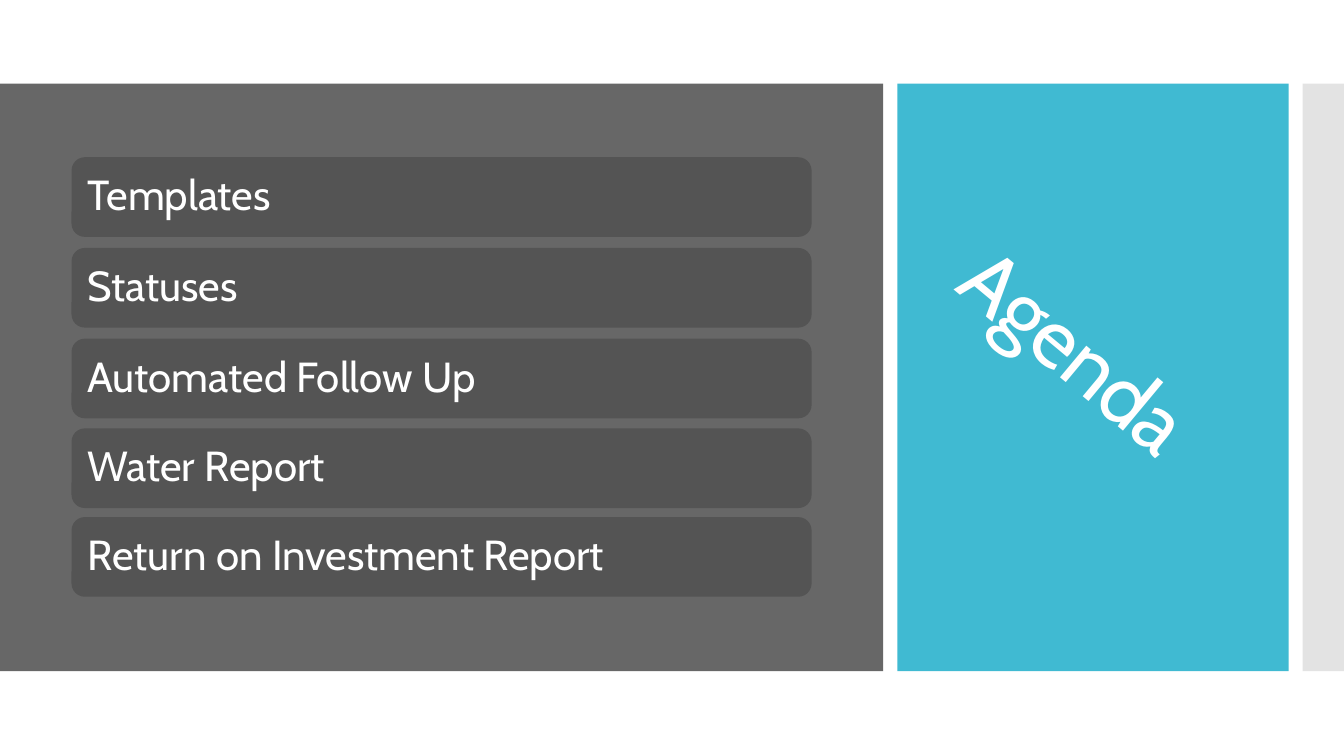
from dataclasses import dataclass

import lxml.etree
import pptx
import pptx.dml.color
import pptx.enum.shapes
import pptx.enum.text
import pptx.oxml.ns
import pptx.util

Inches = pptx.util.Inches
SHAPE = pptx.enum.shapes.MSO_SHAPE
FONT = "Cabin"
WHITE = "FFFFFF"
BAND_TOP, BAND_HEIGHT = 0.83, 5.83
BAR_LEFT, BAR_WIDTH, BAR_HEIGHT = 0.71, 7.34, 0.79


@dataclass
class Panel:
    left: float
    width: float
    color: str
    opacity: int = 100


@dataclass
class AgendaItem:
    top: float
    text: str


PANELS = [
    Panel(0, 8.76, "676767"),
    Panel(8.9, 3.88, "40BAD2"),
    Panel(12.92, 0.42, "C8C8C8", 50),
]
ITEMS = [
    AgendaItem(1.56, "Templates"),
    AgendaItem(2.46, "Statuses"),
    AgendaItem(3.36, "Automated Follow Up"),
    AgendaItem(4.25, "Water Report"),
    AgendaItem(5.13, "Return on Investment Report"),
]


def set_fill(fill, color: str, opacity: int = 100) -> None:
    fill.solid()
    fill.fore_color.rgb = pptx.dml.color.RGBColor.from_string(color)
    if opacity < 100:
        clr = fill._xPr.find(".//" + pptx.oxml.ns.qn("a:srgbClr"))
        alpha = lxml.etree.SubElement(clr, pptx.oxml.ns.qn("a:alpha"))
        alpha.set("val", str(opacity * 1000))


def add_block(s, kind, left: float, top: float, width: float, height: float,
              color: str, opacity: int = 100):
    sp = s.shapes.add_shape(kind, Inches(left), Inches(top),
                            Inches(width), Inches(height))
    sp.shadow.inherit = False
    sp.line.fill.background()
    set_fill(sp.fill, color, opacity)
    return sp


def write_text(sp, text: str, size: int):
    """Write one left-aligned white line, centred vertically in the shape."""
    tf = sp.text_frame
    tf.word_wrap = True
    tf.auto_size = pptx.enum.text.MSO_AUTO_SIZE.NONE
    tf.vertical_anchor = pptx.enum.text.MSO_ANCHOR.MIDDLE
    p = tf.paragraphs[0]
    p.alignment = pptx.enum.text.PP_ALIGN.LEFT
    p.line_spacing = 0.9
    r = p.add_run()
    r.text = text
    r.font.name = FONT
    r.font.size = pptx.util.Pt(size)
    set_fill(r.font.fill, WHITE)
    return r


def add_panel(s, panel: Panel) -> None:
    add_block(s, SHAPE.RECTANGLE, panel.left, BAND_TOP, panel.width,
              BAND_HEIGHT, panel.color, panel.opacity)


def add_item(s, item: AgendaItem) -> None:
    sp = add_block(s, SHAPE.ROUNDED_RECTANGLE, BAR_LEFT, item.top,
                   BAR_WIDTH, BAR_HEIGHT, "545454")
    tf = sp.text_frame
    tf.margin_left = tf.margin_right = Inches(0.12)
    tf.margin_top = tf.margin_bottom = Inches(0.12)
    write_text(sp, item.text, 30)


def place_title(s) -> None:
    sp = s.shapes.title
    sp.left, sp.top = Inches(9.18), Inches(3.17)
    sp.width, sp.height = Inches(3.22), Inches(0.92)
    sp.rotation = 39.8
    r = write_text(sp, "Agenda", 60)
    r.font._element.set("spc", "-60")
    s.shapes._spTree.append(sp._element)  # bring in front of the panels


def main() -> None:
    prs = pptx.Presentation()
    prs.slide_width, prs.slide_height = Inches(13.33), Inches(7.5)
    s = prs.slides.add_slide(prs.slide_layouts[0])
    subtitle = s.placeholders[1]._element
    subtitle.getparent().remove(subtitle)
    set_fill(s.background.fill, WHITE)
    for panel in PANELS:
        add_panel(s, panel)
    place_title(s)
    for item in ITEMS:
        add_item(s, item)
    prs.save("out.pptx")


if __name__ == "__main__":
    main()
